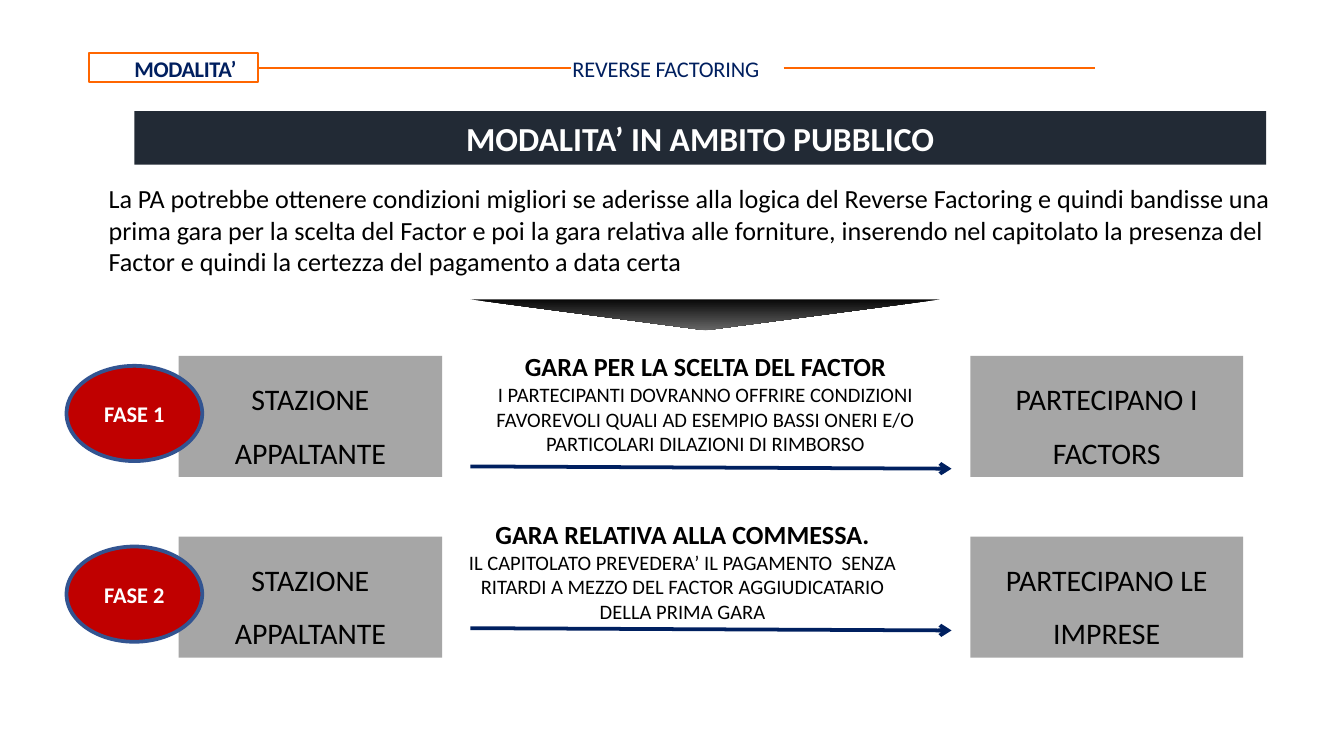
from lxml import etree
from pptx import Presentation
from pptx.dml.color import RGBColor
from pptx.enum.shapes import MSO_CONNECTOR, MSO_SHAPE
from pptx.enum.text import MSO_ANCHOR, PP_ALIGN
from pptx.oxml.ns import qn
from pptx.util import Inches, Pt

RECT, OVAL, TRIANGLE = MSO_SHAPE.RECTANGLE, MSO_SHAPE.OVAL, MSO_SHAPE.ISOSCELES_TRIANGLE
STRAIGHT = MSO_CONNECTOR.STRAIGHT
LEFT, CENTER = PP_ALIGN.LEFT, PP_ALIGN.CENTER
TOP, MIDDLE = MSO_ANCHOR.TOP, MSO_ANCHOR.MIDDLE
color = RGBColor.from_string

prs = Presentation()
prs.slide_width, prs.slide_height = Inches(10), Inches(10) * 9 // 16
s = prs.slides.add_slide(prs.slide_layouts[6])
COL, ROW = prs.slide_width / 100, prs.slide_height / 100


def box(kind, x, y, w, h, lines=(), fill=None, line=None, align=CENTER, anchor=TOP, spacing=None):
    frame = int(x * COL), int(y * ROW), int(w * COL), int(h * ROW)
    sp = s.shapes.add_shape(kind, *frame) if kind else s.shapes.add_textbox(*frame)
    if kind:
        sp.shadow.inherit = False
        sp.fill.background()
        sp.line.fill.background()
    if fill:
        sp.fill.solid()
        sp.fill.fore_color.rgb = color(fill)
    if line:
        sp.line.color.rgb, sp.line.width = color(line[0]), Pt(line[1])
    tf = sp.text_frame
    tf.word_wrap, tf.vertical_anchor = True, anchor
    for i, (text, size, rgb, bold) in enumerate(lines):
        p = tf.add_paragraph() if i else tf.paragraphs[0]
        p.add_run().text = text
        p.alignment, p.line_spacing = align, spacing
        p.font.name, p.font.size, p.font.bold = "Calibri", Pt(size), bold
        p.font.color.rgb = color(rgb)
    return sp


def connector(x1, y1, x2, y2, rgb, width, arrow=False):
    c = s.shapes.add_connector(STRAIGHT, int(x1 * COL), int(y1 * ROW), int(x2 * COL), int(y2 * ROW))
    c.line.color.rgb, c.line.width = color(rgb), Pt(width)
    if arrow:
        etree.SubElement(c.line._get_or_add_ln(), qn("a:tailEnd"), type="arrow")
    etree.SubElement(c._element.spPr, qn("a:effectLst"))
    return c


sp = box(TRIANGLE, 35, 39.6, 35, 4.1)
sp._element.spPr.xfrm.set("flipV", "1")
sp.fill.gradient()
sp.fill.gradient_angle = 90
for stop, rgb, position in zip(sp.fill.gradient_stops, ("080808", "666666"), (0, 1)):
    stop.color.rgb, stop.position = color(rgb), position

box(RECT, 10, 14.7, 84.2, 7.1, [("MODALITA’ IN AMBITO PUBBLICO", 18, "FFFFFF", True)], "222A35")

tag = box(RECT, 6.6, 7, 12.6, 3.9, [("MODALITA’", 12, "001F5F", True)], line=("FF6600", 1.19))
topic = box(None, 42.5, 7.1, 16.7, 7.3, [("REVERSE FACTORING", 12, "001F5F", False)], align=LEFT)
intro = box(None, 5.5, 23.3, 91.4, 18.3, [(
    "La PA potrebbe ottenere condizioni migliori se aderisse alla logica del Reverse Factoring "
    "e quindi bandisse una prima gara per la scelta del Factor e poi la gara relativa alle "
    "forniture, inserendo nel capitolato la presenza del Factor e quindi la certezza del "
    "pagamento a data certa", 14, "000000", False)], align=LEFT)

for sp, inset, before, spc in ((tag, 0.02, 1.4, -20), (topic, 0.01, 1, -10)):
    tf = sp.text_frame
    tf.margin_left = tf.margin_right = tf.margin_bottom = 0
    tf.margin_top = Inches(inset)
    p = tf.paragraphs[0]
    p.space_before = Pt(before)
    p.runs[0].font._element.set("spc", str(spc))
for sp, indent in ((tag, 0.18), (topic, 0.01), (intro, 0.16)):
    pPr = sp.text_frame.paragraphs[0]._p.get_or_add_pPr()
    pPr.set("marL", str(Inches(indent)))
    pPr.set("indent", "0")

rule = connector(19.2, 8.95, 42.5, 8.95, "FF6600", 1.19)
rule.begin_connect(tag, 3)
connector(58.3, 8.95, 81.5, 8.95, "FF6600", 1.19)

phases = [
    ("FASE 1", 47.1, 61.7, (32.8, 45.5, 39.4, 18.9), "PARTECIPANO I FACTORS",
     "GARA PER LA SCELTA DEL FACTOR",
     "I PARTECIPANTI DOVRANNO OFFRIRE CONDIZIONI FAVOREVOLI QUALI AD ESEMPIO BASSI ONERI E/O "
     "PARTICOLARI DILAZIONI DI RIMBORSO"),
    ("FASE 2", 71, 83.1, (33.6, 67.7, 34.4, 23.1), "PARTECIPANO LE IMPRESE",
     "GARA RELATIVA ALLA COMMESSA.",
     "IL CAPITOLATO PREVEDERA’ IL PAGAMENTO  SENZA RITARDI A MEZZO DEL FACTOR AGGIUDICATARIO "
     "DELLA PRIMA GARA"),
]
for phase, y, arrow_y, frame, bidders, title, detail in phases:
    for x, w, text in ((13.3, 19.6, "STAZIONE APPALTANTE"), (72.2, 20.3, bidders)):
        box(RECT, x, y, w, 16, [(text, 16, "000000", False)], "A6A6A6", spacing=1.5)
    connector(35, arrow_y, 70.8, arrow_y + 0.3, "002060", 2, arrow=True)
    box(None, *frame, [(title, 14, "000000", True), (detail, 11, "000000", False)])
    box(OVAL, 4.95, y + 1.3, 10.1, 12.6, [(phase, 12, "FFFFFF", True)], "C00000",
        ("325491", 2), anchor=MIDDLE)

prs.save("out.pptx")
